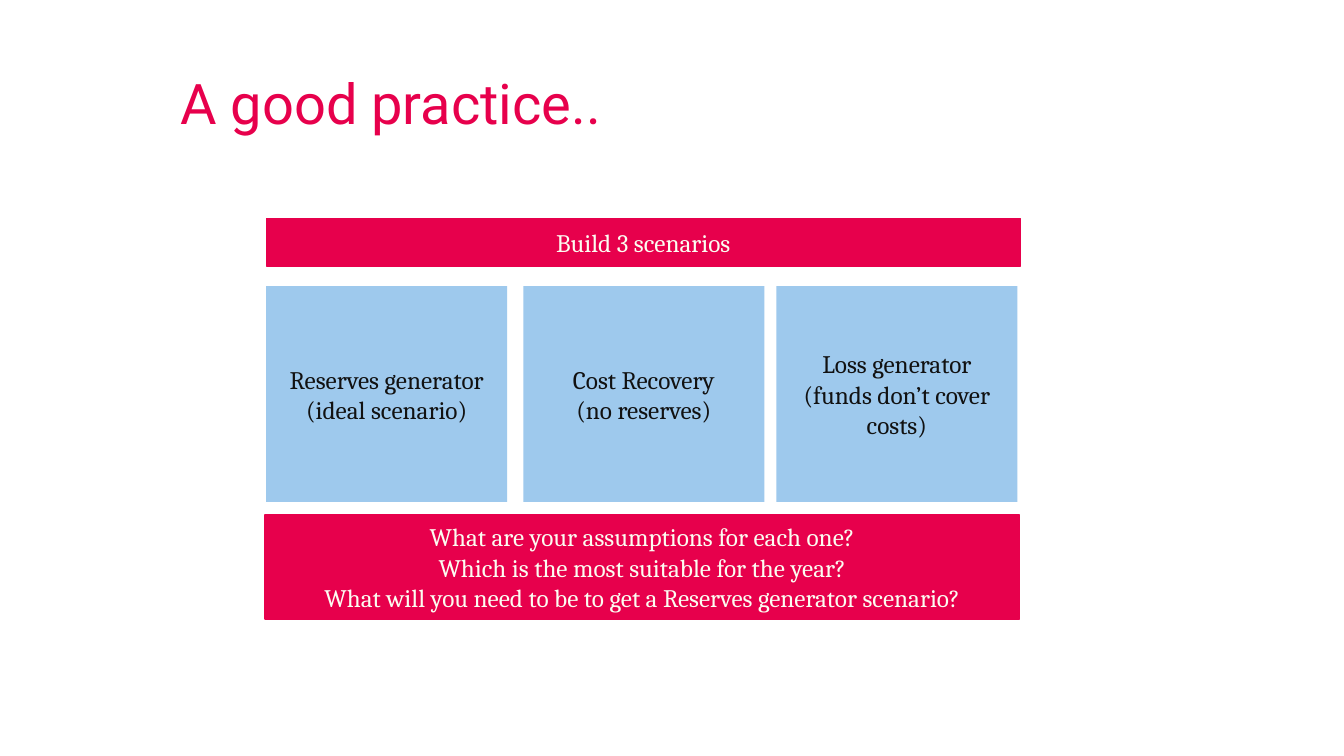
from dataclasses import dataclass
from typing import Any

from pptx import Presentation
from pptx import util as u
from pptx.dml.color import RGBColor
from pptx.enum import shapes, text

CRIMSON = RGBColor(0xE7, 0x00, 0x4C)
SKY = RGBColor(0x9E, 0xC9, 0xED)
IVORY = RGBColor(0xFC, 0xFC, 0xF1)
INK = RGBColor(0x11, 0x11, 0x11)


@dataclass(frozen=True)
class BoxStyle:
    fill: RGBColor
    font: RGBColor
    outlined: bool


@dataclass(frozen=True)
class Box:
    left: float
    top: float
    width: float
    height: float
    lines: tuple[str, ...]
    style: BoxStyle


BANNER = BoxStyle(CRIMSON, IVORY, True)
SCENARIO = BoxStyle(SKY, INK, False)

SCENARIOS = (
    (2.64, ("Reserves generator (ideal scenario)",)),
    (5.19, ("Cost Recovery", "(no reserves)")),
    (7.7, ("Loss generator", "(funds don’t cover costs)")),
)
QUESTIONS = (
    "What are your assumptions for each one?",
    "Which is the most suitable for the year?",
    "What will you need to be to get a Reserves generator scenario?",
)
BOXES = (
    Box(2.64, 2.17, 7.48, 0.47, ("Build 3 scenarios",), BANNER),
    *(Box(left, 2.84, 2.39, 2.14, lines, SCENARIO) for left, lines in SCENARIOS),
    Box(2.63, 5.11, 7.48, 1.03, QUESTIONS, BANNER),
)


def apply_format(target: Any, values: dict[str, Any]) -> None:
    for name, value in values.items():
        setattr(target, name, value)


def format_font(font: Any, name: str, size: int, color: RGBColor) -> None:
    apply_format(font, {"name": name, "size": u.Pt(size), "bold": False})
    font.color.rgb = color


def place_title(slide: Any, wording: str) -> None:
    title = slide.shapes.title
    apply_format(title, {
        "left": u.Inches(1.79), "top": u.Inches(0.76),
        "width": u.Inches(10.63), "height": u.Inches(0.66),
    })
    frame = title.text_frame
    frame.text = wording
    apply_format(frame, {
        "margin_left": 0, "margin_right": 0, "margin_top": 0, "margin_bottom": 0,
        "word_wrap": True, "auto_size": text.MSO_AUTO_SIZE.NONE,
        "vertical_anchor": text.MSO_ANCHOR.TOP,
    })
    paragraph = frame.paragraphs[0]
    apply_format(paragraph, {"alignment": text.PP_ALIGN.LEFT, "line_spacing": 0.9})
    format_font(paragraph.runs[0].font, "Roboto", 40, CRIMSON)


def draw_box(slide: Any, box: Box) -> None:
    bounds = map(u.Inches, (box.left, box.top, box.width, box.height))
    shape = slide.shapes.add_shape(shapes.MSO_SHAPE.RECTANGLE, *bounds)
    shape.shadow.inherit = False
    shape.fill.solid()
    shape.fill.fore_color.rgb = box.style.fill
    if box.style.outlined:
        shape.line.color.rgb = box.style.fill
        shape.line.width = u.Pt(1)
    else:
        shape.line.fill.background()
    frame = shape.text_frame
    frame.text = "\n".join(box.lines)
    apply_format(frame, {"word_wrap": True, "vertical_anchor": text.MSO_ANCHOR.MIDDLE})
    for paragraph in frame.paragraphs:
        paragraph.alignment = text.PP_ALIGN.CENTER
        format_font(paragraph.runs[0].font, "Cambria", 18, box.style.font)


def main() -> None:
    presentation = Presentation()
    apply_format(presentation, {
        "slide_width": u.Inches(13.33), "slide_height": u.Inches(7.5),
    })
    slide = presentation.slides.add_slide(presentation.slide_layouts.get_by_name("Title Only"))
    place_title(slide, "A good practice..")
    for box in BOXES:
        draw_box(slide, box)
    presentation.save("out.pptx")


if __name__ == "__main__":
    main()
